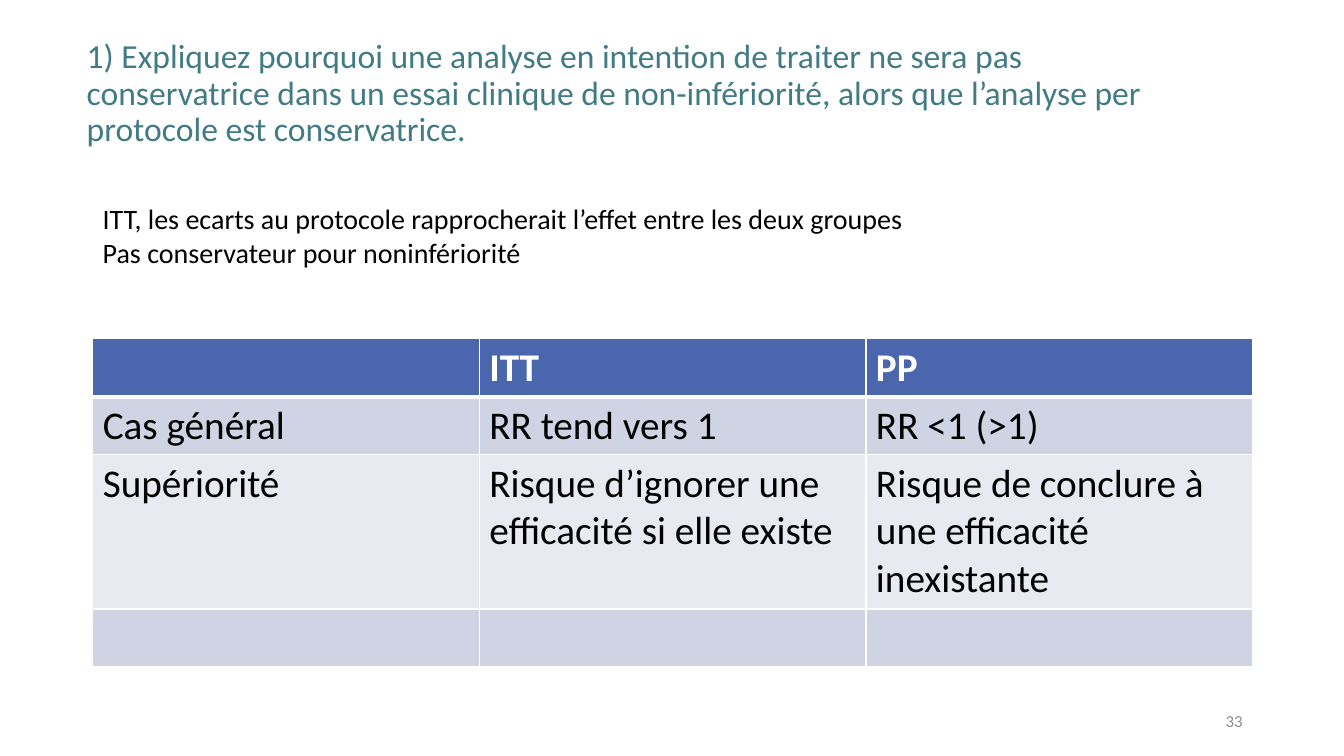
from lxml.etree import SubElement
from pptx import Presentation
from pptx.dml.color import RGBColor as Rgb
from pptx.enum.text import MSO_ANCHOR as Anchor, PP_ALIGN as Align
from pptx.oxml.ns import qn
from pptx.util import Inches, Pt

WIDTH, HEIGHT = Inches(13.33), Inches(7.5)
COLORS = {
    "title": "417B85",
    "text": "000000",
    "number": "8C8C8C",
    "white": "FFFFFF",
    "header": "4A66AC",
    "band_dark": "D0D3E3",
    "band_light": "E9EAF1",
}
TITLE = (
    "1) Expliquez pourquoi une analyse en intention de traiter ne sera pas "
    "conservatrice dans un essai clinique de non-infériorité, alors que "
    "l’analyse per protocole est conservatrice."
)
REMARKS = [
    "ITT, les ecarts au protocole rapprocherait l’effet entre les deux groupes",
    "Pas conservateur pour noninfériorité",
]
COMPARISON = [
    ["", "ITT", "PP"],
    ["Cas général", "RR tend vers 1", "RR <1 (>1)"],
    [
        "Supériorité",
        "Risque d’ignorer une efficacité si elle existe",
        "Risque de conclure à une efficacité inexistante",
    ],
    ["", "", ""],
]
ROW_HEIGHTS = [0.57, 0.57, 1.53, 0.57]


def area(left, top, width, height):
    """Turn shares of the slide into left, top, width and height."""
    return [
        int(share * side)
        for share, side in zip((left, top, width, height), (WIDTH, HEIGHT) * 2)
    ]


def add_span(para, text, size, color, bold=False):
    """Add one formatted run to a paragraph."""
    span = para.add_run()
    span.text = text
    span.font.name = "Calibri"
    span.font.size = Pt(size)
    span.font.bold = bold
    span.font.color.rgb = Rgb.from_string(COLORS[color])


def set_title(page, text):
    """Place and fill the title placeholder."""
    box = page.shapes.title
    box.left, box.top, box.width, box.height = area(0.057, 0.072, 0.829, 0.153)
    frame = box.text_frame
    frame.word_wrap = True
    frame.vertical_anchor = Anchor.MIDDLE
    frame.margin_bottom = Inches(0.41)
    para = frame.paragraphs[0]
    para.alignment = Align.LEFT
    para.line_spacing = 0.9
    add_span(para, text, 24, "title")


def add_text(page, place, lines, size, color, align=Align.LEFT, anchor=Anchor.TOP):
    """Add a text box with one paragraph per line."""
    frame = page.shapes.add_textbox(*place).text_frame
    frame.word_wrap = True
    frame.vertical_anchor = anchor
    for index, line in enumerate(lines):
        para = frame.add_paragraph() if index else frame.paragraphs[0]
        para.alignment = align
        add_span(para, line, size, color)


def add_border(cell, side, points):
    """Draw one white cell border."""
    line = SubElement(
        cell._tc.get_or_add_tcPr(), qn(f"a:ln{side}"), w=str(Pt(points))
    )
    fill = SubElement(line, qn("a:solidFill"))
    SubElement(fill, qn("a:srgbClr"), val=COLORS["white"])


def format_cell(cell, text, row):
    """Write, border and fill a cell according to its row."""
    for side in "LRTB":
        thick = (row == 0 and side == "B") or (row == 1 and side == "T")
        add_border(cell, side, 3 if thick else 1)
    band = "header" if row == 0 else "band_dark" if row % 2 else "band_light"
    cell.fill.solid()
    cell.fill.fore_color.rgb = Rgb.from_string(COLORS[band])
    if text:
        color = "text" if row else "white"
        add_span(cell.text_frame.paragraphs[0], text, 28, color, row == 0)


def add_comparison(page, place, rows):
    """Add the banded comparison table."""
    table = page.shapes.add_table(len(rows), len(rows[0]), *place).table
    for row, texts in enumerate(rows):
        table.rows[row].height = Inches(ROW_HEIGHTS[row])
        for column, text in enumerate(texts):
            format_cell(table.cell(row, column), text, row)


def main():
    """Build and save the slide."""
    deck = Presentation()
    deck.slide_width, deck.slide_height = WIDTH, HEIGHT
    page = deck.slides.add_slide(deck.slide_layouts[5])
    set_title(page, TITLE)
    add_comparison(page, area(0.069, 0.448, 0.863, 0.432), COMPARISON)
    add_text(page, area(0.707, 0.927, 0.225, 0.053), ["33"], 12, "number",
             Align.RIGHT, Anchor.MIDDLE)
    add_text(page, area(0.069, 0.26, 0.617, 0.103), REMARKS, 20, "text")
    deck.save("out.pptx")


if __name__ == "__main__":
    main()
